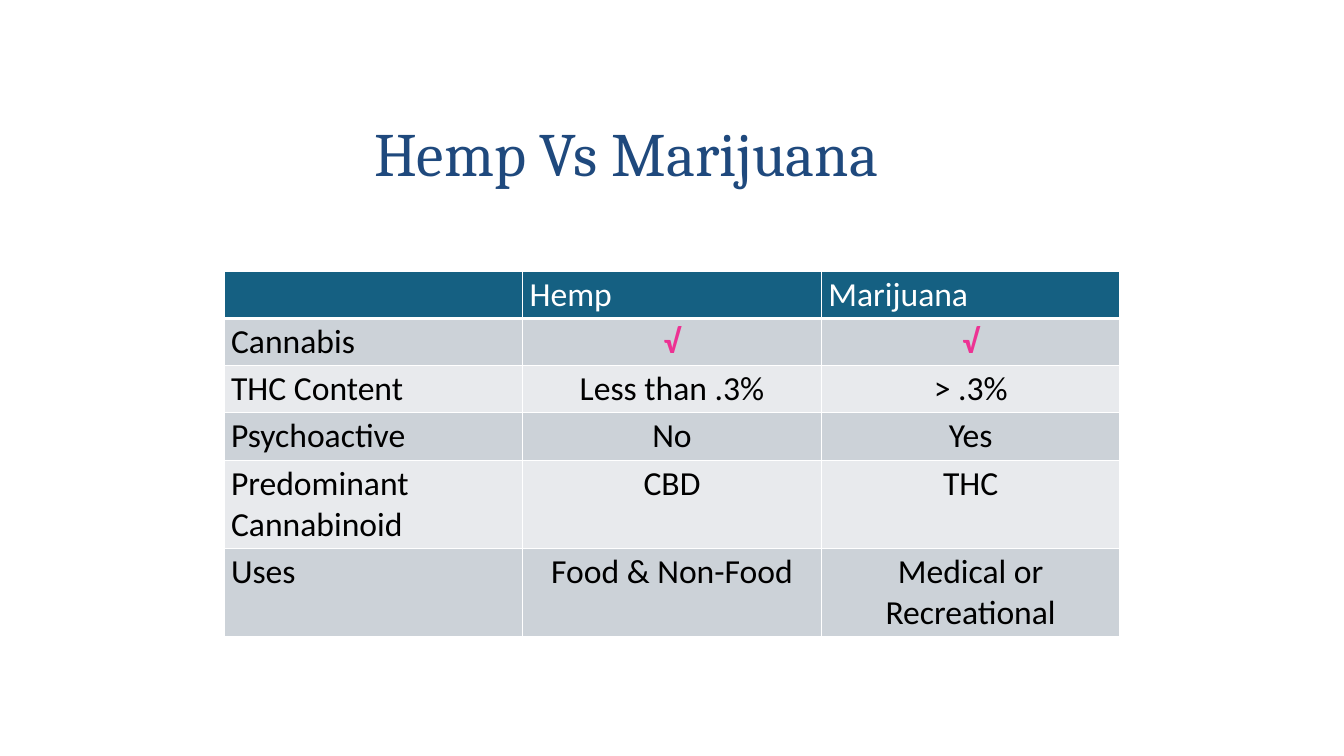
from lxml import etree
from pptx import Presentation
from pptx import util as u
from pptx.dml import color
from pptx.enum import text
from pptx.oxml import ns

COMPARISON = [
    ["", "Hemp", "Marijuana"],
    ["Cannabis", "√", "√"],
    ["THC Content", "Less than .3%", "> .3%"],
    ["Psychoactive", "No", "Yes"],
    ["Predominant Cannabinoid", "CBD", "THC"],
    ["Uses", "Food & Non-Food", "Medical or Recreational"],
]
ROW_SPANS = [1, 1, 1, 1, 1.86, 1.86]


def rgb(value):
    return color.RGBColor.from_string(value)


class ComparisonSlide:
    GRID_COLUMNS, GRID_ROWS = 12, 16
    TITLE_FONT, BODY_FONT = "Cambria", "Calibri"
    NAVY, TEAL, PINK = "1F497D", "156082", "ED3293"
    WHITE, BLACK = "FFFFFF", "000000"
    BANDS = ["E8EAED", "CCD2D8"]

    def __init__(self, deck):
        self.slide = deck.slides.add_slide(deck.slide_layouts[5])
        self.column = deck.slide_width / self.GRID_COLUMNS
        self.row = deck.slide_height / self.GRID_ROWS

    def area(self, left, top, width, height):
        return (int(left * self.column), int(top * self.row),
                int(width * self.column), int(height * self.row))

    def style(self, paragraph, font, size, ink, bold=False):
        for run in paragraph.runs:
            run.font.name = font
            run.font.size = u.Pt(size)
            run.font.bold = bold
            run.font.color.rgb = rgb(ink)

    def title(self, wording, *place):
        heading = self.slide.shapes.title
        heading.left, heading.top, heading.width, heading.height = self.area(*place)
        frame = heading.text_frame
        frame.text = wording
        frame.word_wrap = True
        frame.auto_size = text.MSO_AUTO_SIZE.NONE
        frame.vertical_anchor = text.MSO_ANCHOR.BOTTOM
        line = frame.paragraphs[0]
        line.alignment = text.PP_ALIGN.LEFT
        line.line_spacing = 0.9
        self.style(line, self.TITLE_FONT, 44, self.NAVY)

    def borders(self, cell, bottom):
        properties = cell._tc.get_or_add_tcPr()
        for side, points in {"L": 1, "R": 1, "T": 1, "B": bottom}.items():
            edge = etree.SubElement(properties, ns.qn(f"a:ln{side}"), w=str(u.Pt(points)))
            paint = etree.SubElement(edge, ns.qn("a:solidFill"))
            etree.SubElement(paint, ns.qn("a:srgbClr"), val=self.WHITE)

    def cell(self, cell, wording, row, column):
        header = row == 0
        self.borders(cell, 3 if header else 1)
        cell.fill.solid()
        cell.fill.fore_color.rgb = rgb(self.TEAL if header else self.BANDS[row % 2])
        cell.margin_left = cell.margin_right = u.Inches(0.07)
        cell.margin_top = cell.margin_bottom = u.Inches(0.03)
        cell.text_frame.text = wording
        line = cell.text_frame.paragraphs[0]
        centred = not header and column > 0
        line.alignment = text.PP_ALIGN.CENTER if centred else text.PP_ALIGN.LEFT
        check = wording == "√"
        ink = self.WHITE if header else self.PINK if check else self.BLACK
        self.style(line, self.BODY_FONT, 24, ink, check)

    def table(self, entries, spans, left, top, width):
        place = self.area(left, top, width, sum(spans))
        table = self.slide.shapes.add_table(len(entries), len(entries[0]), *place).table
        for row, (wordings, span) in enumerate(zip(entries, spans)):
            table.rows[row].height = int(span * self.row)
            for column, wording in enumerate(wordings):
                self.cell(table.cell(row, column), wording, row, column)


def main():
    deck = Presentation()
    deck.slide_width, deck.slide_height = u.Inches(13.33), u.Inches(7.5)
    comparison = ComparisonSlide(deck)
    comparison.title("Hemp Vs Marijuana", 3.25, 1.05, 6.03, 3.07)
    comparison.table(COMPARISON, ROW_SPANS, 2, 5.74, 8)
    deck.save("out.pptx")


if __name__ == "__main__":
    main()
